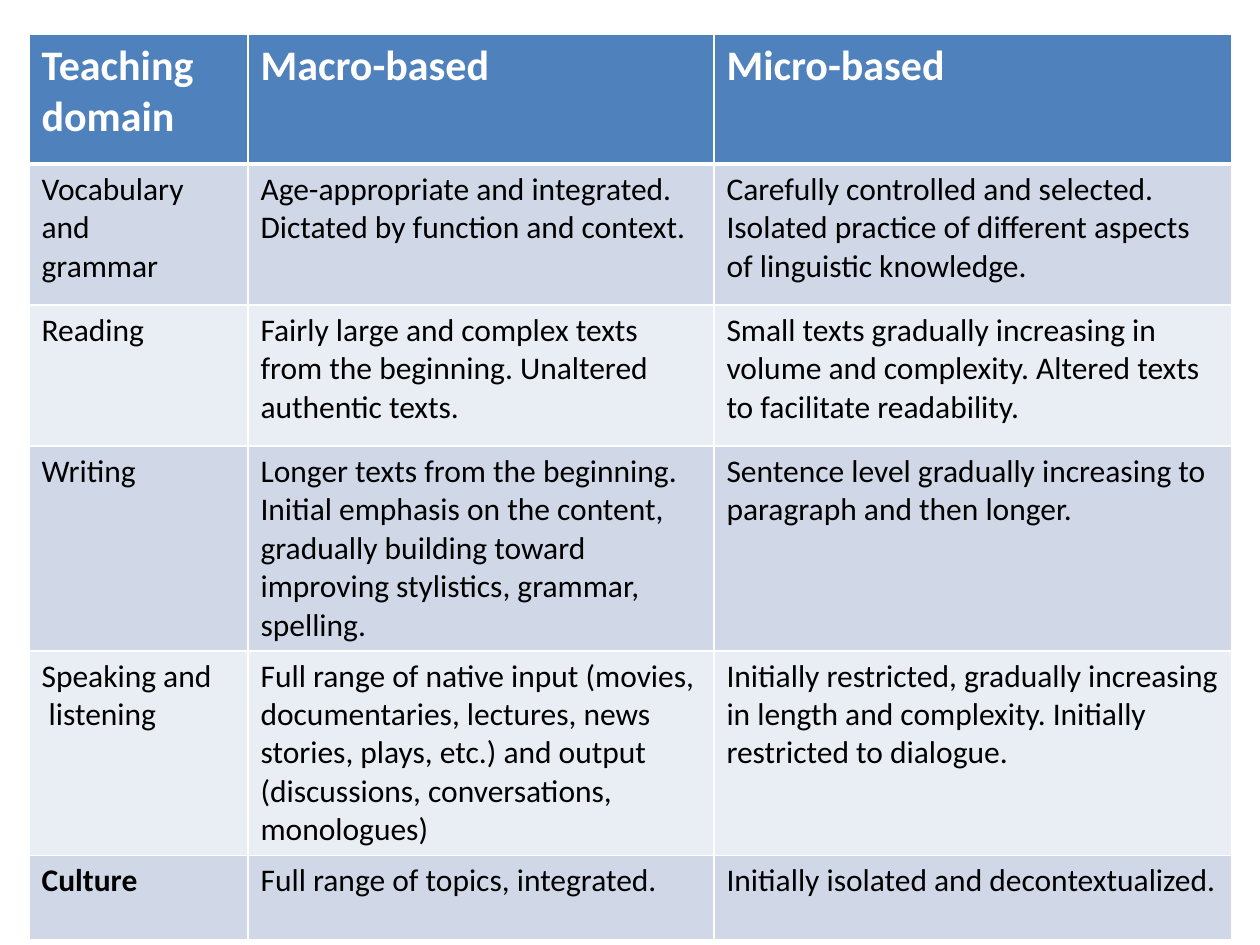
from dataclasses import dataclass

from lxml.etree import SubElement
from pptx import Presentation
from pptx.dml.color import RGBColor
from pptx.oxml.ns import qn
from pptx.util import Pt

# Content: each cell is a list of paragraphs
HEADER = [["Teaching domain"], ["Macro-based"], ["Micro-based"]]
ROWS = [
    [["Vocabulary and", "grammar"],
     ["Age-appropriate and integrated. Dictated by function and context."],
     ["Carefully controlled and selected. Isolated practice of different "
      "aspects of linguistic knowledge."]],
    [["Reading"],
     ["Fairly large and complex texts from the beginning. Unaltered "
      "authentic texts."],
     ["Small texts gradually increasing in volume and complexity. Altered "
      "texts to facilitate readability."]],
    [["Writing"],
     ["Longer texts from the beginning. Initial emphasis on the content, "
      "gradually building toward improving stylistics, grammar, spelling."],
     ["Sentence level gradually increasing to paragraph and then longer."]],
    [["Speaking and", " listening"],
     ["Full range of native input (movies, documentaries, lectures, news "
      "stories, plays, etc.) and output (discussions, conversations, "
      "monologues)"],
     ["Initially restricted, gradually increasing in length and complexity. "
      "Initially restricted to dialogue."]],
    [["Culture"],
     ["Full range of topics, integrated."],
     ["Initially isolated and decontextualized."]],
]
BOLD_LABELS = {"Culture"}

# Layout in px
SLIDE_W, SLIDE_H = 1260, 945
LEFT, TOP = 29, 34
COL_W = [219, 466, 518]
ROW_H = [130, 141, 141, 141, 141, 84]


@dataclass(frozen=True)
class Theme:
    font: str = "Calibri"
    head_size: int = 24
    body_size: int = 18
    head_fill: str = "4F81BD"
    bands: tuple = ("D0D8E8", "E9EDF4")
    head_text: str = "FFFFFF"
    body_text: str = "000000"
    border: str = "FFFFFF"
    thin: int = 1
    thick: int = 3


THEME = Theme()


def px(n):
    return round(n * 914400 / 126)


def set_borders(cell, widths):
    tc_pr = cell._tc.get_or_add_tcPr()
    for side, width in widths.items():
        ln = SubElement(tc_pr, qn(f"a:ln{side}"), w=str(Pt(width)))
        fill = SubElement(ln, qn("a:solidFill"))
        SubElement(fill, qn("a:srgbClr"), val=THEME.border)


def write_cell(cell, paragraphs, size, color, bold):
    tf = cell.text_frame
    for i, text in enumerate(paragraphs):
        p = tf.add_paragraph() if i else tf.paragraphs[0]
        r = p.add_run()
        r.text = text
        r.font.name = THEME.font
        r.font.size = Pt(size)
        r.font.bold = bold
        r.font.color.rgb = RGBColor.from_string(color)


def main():
    prs = Presentation()
    prs.slide_width, prs.slide_height = px(SLIDE_W), px(SLIDE_H)
    s = prs.slides.add_slide(prs.slide_layouts[6])

    # Table grid
    rows = [HEADER, *ROWS]
    table = s.shapes.add_table(len(rows), len(COL_W), px(LEFT), px(TOP),
                               px(sum(COL_W)), px(sum(ROW_H))).table
    for column, width in zip(table.columns, COL_W):
        column.width = px(width)
    for row, height in zip(table.rows, ROW_H):
        row.height = px(height)

    # Cells: header row, then alternating bands
    for i, row in enumerate(rows):
        head = i == 0
        fill = THEME.head_fill if head else THEME.bands[(i - 1) % 2]
        size = THEME.head_size if head else THEME.body_size
        color = THEME.head_text if head else THEME.body_text
        borders = {"L": THEME.thin, "R": THEME.thin,
                   "T": THEME.thick if i == 1 else THEME.thin,
                   "B": THEME.thick if head else THEME.thin}
        for j, paragraphs in enumerate(row):
            cell = table.cell(i, j)
            set_borders(cell, borders)
            cell.fill.solid()
            cell.fill.fore_color.rgb = RGBColor.from_string(fill)
            write_cell(cell, paragraphs, size, color,
                       head or paragraphs[0] in BOLD_LABELS)

    prs.save("out.pptx")


if __name__ == "__main__":
    main()
